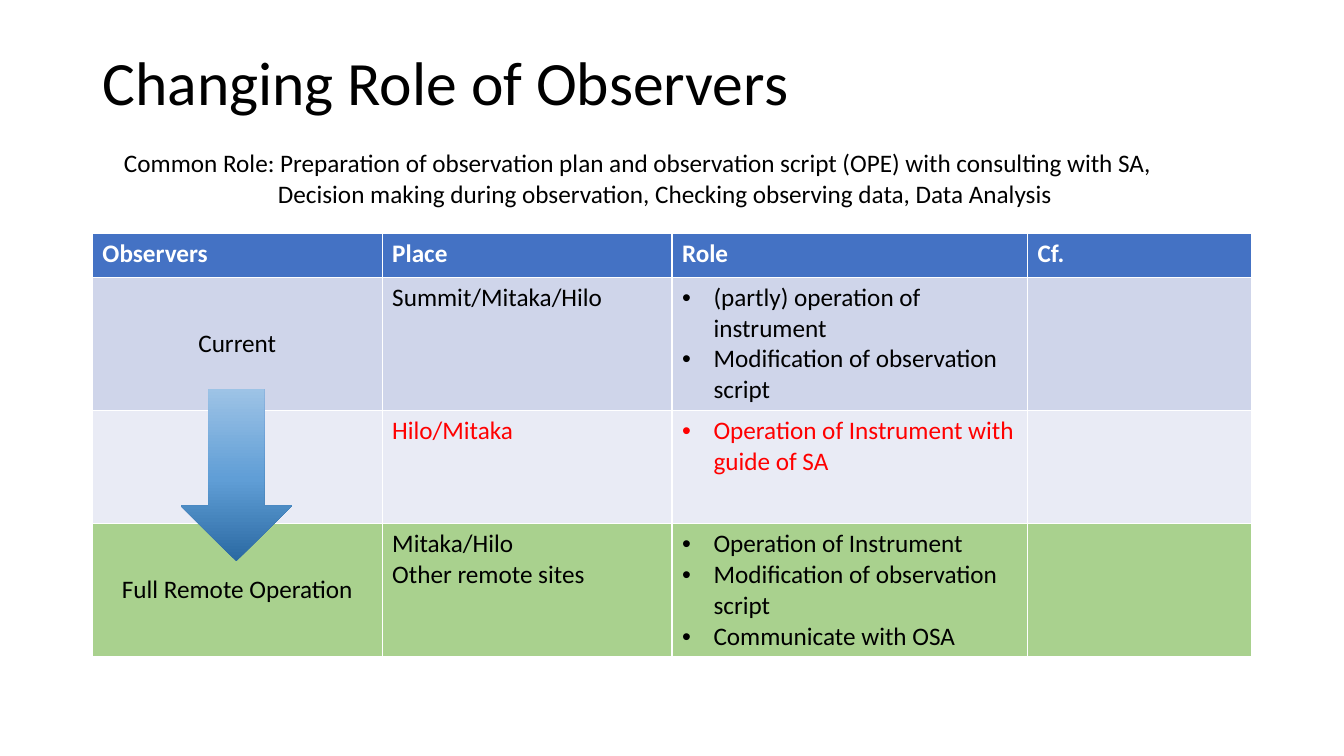
from copy import deepcopy

from lxml import etree
from pptx import Presentation
from pptx.dml.color import RGBColor
from pptx.enum.shapes import MSO_SHAPE
from pptx.enum.text import MSO_ANCHOR, PP_ALIGN
from pptx.oxml.ns import qn
from pptx.util import Pt

TITLE = "Changing Role of Observers"
COMMON_ROLE = [
    ("Common Role: Preparation of observation plan and observation script (OPE) with consulting with SA,", 0),
    ("Decision making during observation, Checking observing data, Data Analysis", 110),
]

FONT = "Calibri"
BLACK = RGBColor(0x00, 0x00, 0x00)
WHITE = RGBColor(0xFF, 0xFF, 0xFF)
RED = RGBColor(0xFF, 0x00, 0x00)
BLUE = RGBColor(0x44, 0x72, 0xC4)
LAVENDER = RGBColor(0xCF, 0xD5, 0xEA)
PALE = RGBColor(0xE9, 0xEB, 0xF5)
GREEN = RGBColor(0xA9, 0xD1, 0x8E)
ARROW_STOPS = [
    (0, RGBColor(0x2A, 0x69, 0xA2)),
    (0.48, RGBColor(0x60, 0x9E, 0xD6)),
    (1, RGBColor(0x9D, 0xC3, 0xE6)),
]

LEFT, CENTER = PP_ALIGN.LEFT, PP_ALIGN.CENTER
TOP, MIDDLE = MSO_ANCHOR.TOP, MSO_ANCHOR.MIDDLE
DOWN_ARROW = MSO_SHAPE.DOWN_ARROW

COL_WIDTHS = [207, 207, 254, 160]
ROLE_COL = 2
ROWS = [
    (31.5, BLUE, WHITE, ["Observers", "Place", "Role", "Cf."]),
    (95, LAVENDER, BLACK, [
        "Current",
        "Summit/Mitaka/Hilo",
        "(partly) operation of instrument\nModification of observation script",
        "",
    ]),
    (81, PALE, RED, ["", "Hilo/Mitaka", "Operation of Instrument with guide of SA", ""]),
    (95, GREEN, BLACK, [
        "Full Remote Operation",
        "Mitaka/Hilo\nOther remote sites",
        "Operation of Instrument\nModification of observation script\nCommunicate with OSA",
        "",
    ]),
]


def style(p, size, color, bold=False, align=LEFT):
    p.alignment = align
    for r in p.runs:
        r.font.name = FONT
        r.font.size = Pt(size)
        r.font.bold = bold
        r.font.color.rgb = color


def indent(p, left, first=0):
    pPr = p._p.get_or_add_pPr()
    pPr.set("marL", str(Pt(left)))
    pPr.set("indent", str(Pt(first)))
    return pPr


def bullet(p):
    pPr = indent(p, 22.5, -22.5)
    etree.SubElement(pPr, qn("a:buFont")).set("typeface", "Arial")
    etree.SubElement(pPr, qn("a:buChar")).set("char", "•")


def add_title(slide):
    sp = slide.shapes.title
    sp.left, sp.top, sp.width, sp.height = Pt(66), Pt(19.5), Pt(828), Pt(83)
    tf = sp.text_frame
    tf.text = TITLE
    tf.vertical_anchor = MIDDLE
    p = tf.paragraphs[0]
    p.line_spacing = 0.9
    style(p, 44, BLACK)


def add_roles_table(slide):
    height = sum(row[0] for row in ROWS)
    frame = slide.shapes.add_table(
        len(ROWS), len(COL_WIDTHS), Pt(66), Pt(166.5), Pt(sum(COL_WIDTHS)), Pt(height))
    table = frame.table
    table.horz_banding = False
    for col, width in zip(table.columns, COL_WIDTHS):
        col.width = Pt(width)
    for i, (row_height, fill, color, texts) in enumerate(ROWS):
        table.rows[i].height = Pt(row_height)
        header = i == 0
        for j, text in enumerate(texts):
            cell = table.cell(i, j)
            cell.fill.solid()
            cell.fill.fore_color.rgb = fill
            stage = j == 0 and not header
            cell.vertical_anchor = MIDDLE if stage else TOP
            cell.text_frame.text = text
            for p in cell.text_frame.paragraphs:
                style(p, 18, color, header, CENTER if stage else LEFT)
                if j == ROLE_COL and not header:
                    bullet(p)


def add_common_role(slide):
    tf = slide.shapes.add_textbox(Pt(81.5), Pt(102), Pt(762), Pt(51)).text_frame
    tf.word_wrap = True
    tf.text = "\n".join(text for text, left in COMMON_ROLE)
    for p, (text, left) in zip(tf.paragraphs, COMMON_ROLE):
        style(p, 18, BLACK)
        indent(p, left)


def add_progress_arrow(slide):
    sp = slide.shapes.add_shape(DOWN_ARROW, Pt(129), Pt(278), Pt(79.5), Pt(123))
    sp.shadow.inherit = False
    sp.line.fill.background()
    fill = sp.fill
    fill.gradient()
    fill.gradient_angle = 90
    stop_list = sp._element.spPr.find(".//" + qn("a:gsLst"))
    stop_list.append(deepcopy(stop_list[-1]))
    for stop, (position, color) in zip(fill.gradient_stops, ARROW_STOPS):
        stop.position = position
        stop.color.rgb = color


def main():
    prs = Presentation()
    prs.slide_width, prs.slide_height = Pt(960), Pt(540)
    slide = prs.slides.add_slide(prs.slide_layouts[5])
    add_title(slide)
    add_roles_table(slide)
    add_common_role(slide)
    add_progress_arrow(slide)
    prs.save("out.pptx")


if __name__ == "__main__":
    main()
